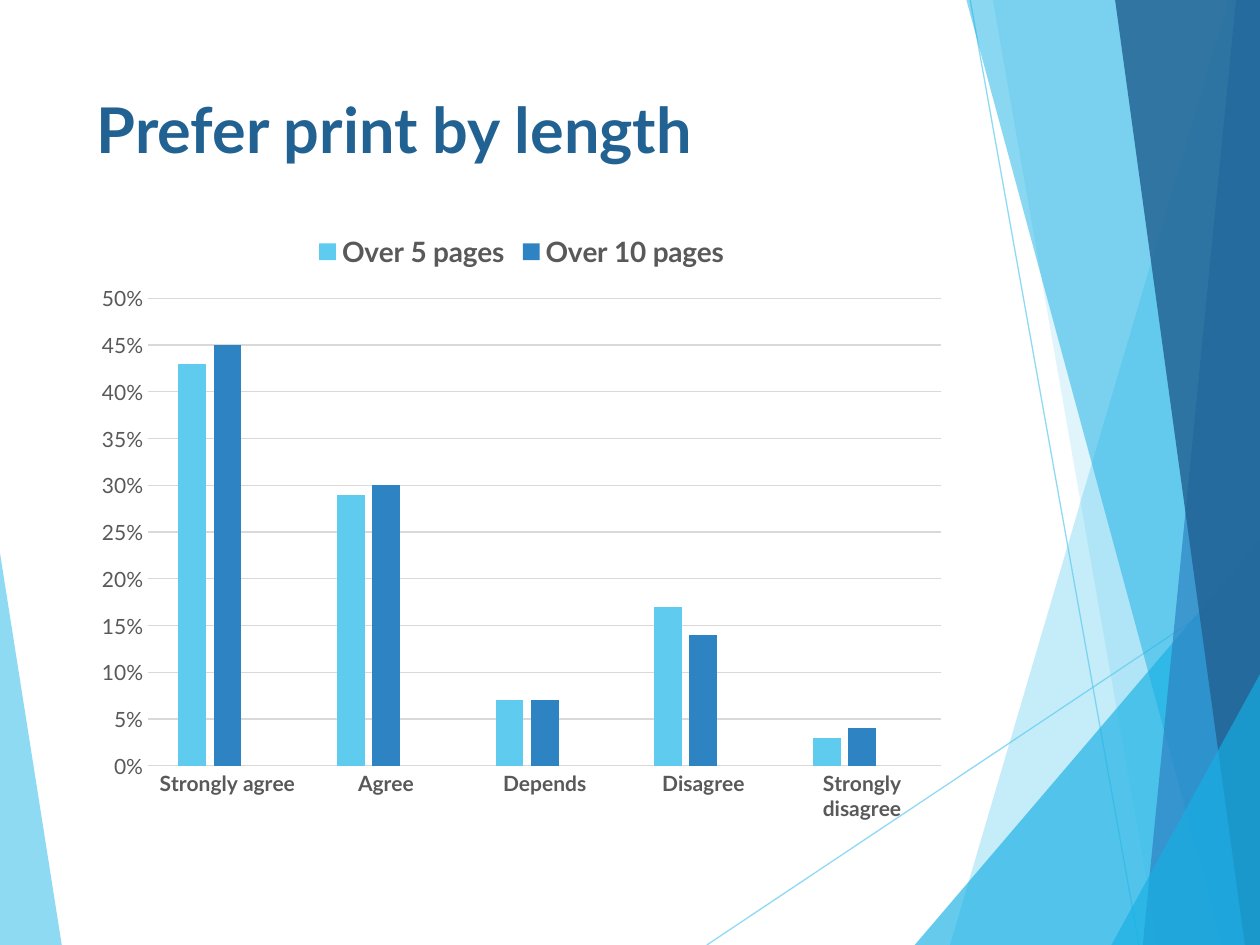
"""Build a slide with a clustered column chart beside overlapping blue facets."""
from typing import NamedTuple

from lxml.etree import SubElement
from pptx import Presentation
from pptx.chart.data import CategoryChartData
from pptx.dml.color import RGBColor
from pptx.enum.chart import XL_CHART_TYPE, XL_LEGEND_POSITION, XL_TICK_MARK
from pptx.enum.shapes import MSO_CONNECTOR
from pptx.enum.text import MSO_ANCHOR
from pptx.oxml import parse_xml
from pptx.oxml.ns import nsdecls, qn
from pptx.util import Inches, Pt

SKY = RGBColor(0x5F, 0xCB, 0xEF)
CYAN = RGBColor(0x17, 0xB0, 0xE4)
BLUE = RGBColor(0x2E, 0x83, 0xC3)
NAVY = RGBColor(0x22, 0x62, 0x92)
GREEN = RGBColor(0x42, 0xD0, 0xA2)
GREY = RGBColor(0x59, 0x59, 0x59)
RULE = RGBColor(0xD9, 0xD9, 0xD9)
FONT = "Lato"
W, H = 10, 7.5


class Facet(NamedTuple):
    points: list[tuple[float, float]]
    color: RGBColor
    opacity: int


class Ray(NamedTuple):
    start: tuple[float, float]
    end: tuple[float, float]


class Series(NamedTuple):
    name: str
    values: list[float | None]
    color: RGBColor


def right_band(top: float, bottom: float, color: RGBColor, opacity: int) -> Facet:
    return Facet([(top, 0), (bottom, H), (W, H), (W, 0)], color, opacity)


def corner(left: float, top: float) -> Facet:
    return Facet([(left, H), (W, top), (W, H)], CYAN, 66)


LEFT_FACET = Facet([(0, 4.39), (0.49, H), (0, H)], SKY, 70)
RAYS = [Ray((5.61, H), (W, 4.57)), Ray((7.7, 0), (9.04, H))]
RIGHT_FACETS = [
    right_band(9.75, 7.54, SKY, 36),
    right_band(7.88, 9.19, SKY, 20),
    corner(7.26, 4.29),
    right_band(7.67, 9.7, CYAN, 50),
    right_band(9.81, 9.07, BLUE, 70),
    right_band(8.85, 9.88, NAVY, 82),
    corner(8.82, 5.35),
]
CATEGORIES = ["Strongly agree", "Agree", "Depends", "Disagree", "Strongly disagree"]
SERIES = [
    Series("Over 5 pages", [0.43, 0.29, 0.07, 0.17, 0.03], SKY),
    Series("Over 10 pages", [0.45, 0.3, 0.07, 0.14, 0.04], BLUE),
    Series("Series 3", [None] * 5, GREEN),
]


def set_opacity(fill_parent, percent: int) -> None:
    color = next(fill_parent.iter(qn("a:srgbClr")))
    SubElement(color, qn("a:alpha"), val=str(percent * 1000))


def add_facet(s, facet: Facet) -> None:
    points = [(Inches(x), Inches(y)) for x, y in facet.points]
    builder = s.shapes.build_freeform(*points[0])
    builder.add_line_segments(points[1:])
    sp = builder.convert_to_shape()
    sp.shadow.inherit = False
    sp.line.fill.background()
    sp.fill.solid()
    sp.fill.fore_color.rgb = facet.color
    set_opacity(sp.fill._xPr, facet.opacity)


def add_ray(s, ray: Ray) -> None:
    ends = [Inches(v) for v in (*ray.start, *ray.end)]
    line = s.shapes.add_connector(MSO_CONNECTOR.STRAIGHT, *ends)
    line.line.width = Pt(0.75)
    line.line.color.rgb = SKY
    sp_pr = line._element.spPr
    set_opacity(sp_pr, 70)
    SubElement(sp_pr, qn("a:effectLst"))


def style_font(font, size: float, color: RGBColor, bold: bool) -> None:
    font.name = FONT
    font.size = Pt(size)
    font.bold = bold
    font.color.rgb = color


def add_title(s, text: str) -> None:
    box = s.shapes.add_textbox(Inches(0.67), Inches(0.67), Inches(6.94), Inches(1.44))
    tf = box.text_frame
    tf.word_wrap = True
    tf.vertical_anchor = MSO_ANCHOR.TOP
    tf.text = text
    style_font(tf.paragraphs[0].runs[0].font, 36, NAVY, True)


def style_axis(axis, bold: bool) -> None:
    axis.major_tick_mark = XL_TICK_MARK.NONE
    axis.minor_tick_mark = XL_TICK_MARK.NONE
    style_font(axis.tick_labels.font, 12, GREY, bold)


def style_rule(line) -> None:
    line.color.rgb = RULE
    line.width = Pt(0.75)


def add_legend(chart, hidden: int) -> None:
    chart.has_legend = True
    legend = chart.legend
    legend.position = XL_LEGEND_POSITION.TOP
    legend.include_in_layout = False
    style_font(legend.font, 16, GREY, True)
    entry = parse_xml(
        f'<c:legendEntry {nsdecls("c")}><c:idx val="{hidden}"/>'
        '<c:delete val="1"/></c:legendEntry>'
    )
    legend._element.find(qn("c:legendPos")).addnext(entry)


def add_column_chart(s) -> None:
    data = CategoryChartData(number_format="0%")
    data.categories = CATEGORIES
    for series in SERIES:
        data.add_series(series.name, series.values)
    chart = s.shapes.add_chart(
        XL_CHART_TYPE.COLUMN_CLUSTERED,
        Inches(0.67), Inches(1.75), Inches(6.94), Inches(4.86), data,
    ).chart
    chart.has_title = False
    chart.font.name = FONT
    chart.font.size = Pt(10)

    plot = chart.plots[0]
    plot.vary_by_categories = False
    plot.gap_width = 219
    plot.overlap = -27
    for drawn, series in zip(plot.series, SERIES):
        drawn.format.fill.solid()
        drawn.format.fill.fore_color.rgb = series.color

    style_axis(chart.category_axis, True)
    style_rule(chart.category_axis.format.line)
    value_axis = chart.value_axis
    style_axis(value_axis, False)
    value_axis.format.line.fill.background()
    style_rule(value_axis.major_gridlines.format.line)
    value_axis.tick_labels.number_format = "0%"
    value_axis.tick_labels.number_format_is_linked = False
    add_legend(chart, 2)


def main() -> None:
    prs = Presentation()
    prs.slide_width, prs.slide_height = Inches(W), Inches(H)
    s = prs.slides.add_slide(prs.slide_layouts[6])
    add_facet(s, LEFT_FACET)
    for ray in RAYS:
        add_ray(s, ray)
    for facet in RIGHT_FACETS:
        add_facet(s, facet)
    add_title(s, "Prefer print by length")
    add_column_chart(s)
    prs.save("out.pptx")


if __name__ == "__main__":
    main()
